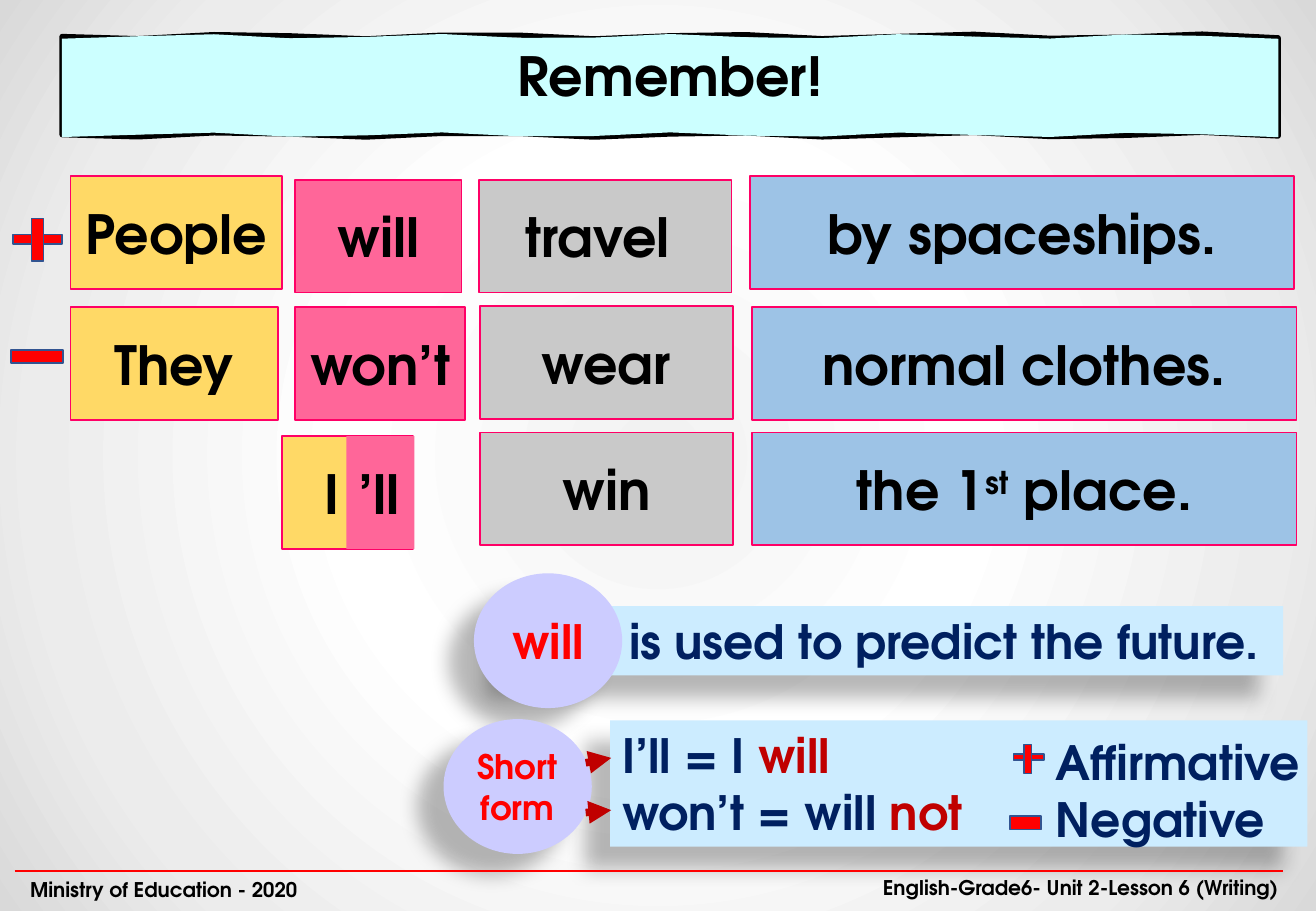
"""Build the "Remember!" slide on will, won't and their short forms."""
from dataclasses import dataclass
from math import sin
from pptx import Presentation
from pptx.dml.color import RGBColor
from pptx.enum.shapes import MSO_CONNECTOR, MSO_SHAPE
from pptx.enum.text import MSO_ANCHOR, MSO_AUTO_SIZE, PP_ALIGN
from pptx.oxml import parse_xml
from pptx.oxml.ns import nsdecls, qn
from pptx.util import Inches, Pt


@dataclass(frozen=True)
class Theme:
    font: str = "TeX Gyre Adventor"
    black: str = "000000"
    navy: str = "002060"
    red: str = "FF0000"
    dark: str = "C00000"
    edge: str = "FF0066"
    trim: str = "325491"
    gold: str = "FFD966"
    pink: str = "FF6699"
    gray: str = "C9C9C9"
    blue: str = "9DC3E6"
    sky: str = "CCECFF"
    lilac: str = "CCCCFF"
    aqua: str = "CCFFFF"
    big: int = 32
    mid: int = 28
    small: int = 20
    foot: int = 12


def paint(shape, fill, line=None, width=1, shade=False):
    """Set the fill, line and shadow of a shape."""
    shape.shadow.inherit = False
    shape.fill.solid()
    shape.fill.fore_color.rgb = RGBColor.from_string(fill)
    if line:
        shape.line.color.rgb = RGBColor.from_string(line)
        shape.line.width = Pt(width)
    else:
        shape.line.fill.background()
    if shade:
        shape.element.spPr.find(qn("a:effectLst")).append(parse_xml(
            f'<a:outerShdw {nsdecls("a")} blurRad="150000" dist="250000" dir="8460000" '
            'algn="tl" rotWithShape="0"><a:srgbClr val="000000"><a:alpha val="28000"/>'
            '</a:srgbClr></a:outerShdw>'))


def style(shape, size, tint, align=PP_ALIGN.CENTER, anchor=MSO_ANCHOR.MIDDLE):
    """Format all the text in a shape."""
    frame = shape.text_frame
    frame.auto_size = MSO_AUTO_SIZE.NONE
    frame.word_wrap = True
    frame.vertical_anchor = anchor
    for para in frame.paragraphs:
        para.alignment = align
        para.space_before = Pt(0)
        for run in para.runs:
            run.font.name = theme.font
            run.font.size = Pt(size)
            run.font.bold = True
            run.font.color.rgb = RGBColor.from_string(tint)


theme = Theme()
deck = Presentation()
deck.slide_width, deck.slide_height = Inches(10.83), Inches(7.5)
slide = deck.slides.add_slide(deck.slide_layouts[3])
shapes = slide.shapes
title, forms, signs = slide.placeholders

stops = "".join(
    f'<a:gs pos="{pos}000"><a:srgbClr val="{tint}"/></a:gs>'
    for pos, tint in [(0, "F2F2F2"), (39, "FFFFFF"), (78, "ECECEC"), (100, "D9D9D9")])
slide.element.find(qn("p:cSld")).insert(0, parse_xml(
    f'<p:bg {nsdecls("p", "a")}><p:bgPr><a:gradFill rotWithShape="1"><a:gsLst>{stops}</a:gsLst>'
    '<a:path path="circle"><a:fillToRect l="50000" t="50000" r="50000" b="50000"/></a:path>'
    '</a:gradFill><a:effectLst/></p:bgPr></p:bg>'))

left, top, wide, high = 0.51, 0.3, 10.01, 0.81
steps = 16
layers = []
for phase in (0, 1.2):
    wave = [(left + wide * i / steps, 0.02 * sin(i * 2 + phase)) for i in range(steps + 1)]
    rim = [(x, top + y) for x, y in wave] + [(x, top + high + y) for x, y in reversed(wave)]
    pen = shapes.build_freeform(Inches(rim[0][0]), Inches(rim[0][1]), scale=1.0)
    pen.add_line_segments([(Inches(x), Inches(y)) for x, y in rim[1:]])
    layers.append(pen.convert_to_shape())
banner, cover = layers
outline, inside = (next(layer.element.iter(qn("a:path"))) for layer in layers)
outline.set("fill", "none")
inside.set("stroke", "0")
outline.addnext(inside)
cover.element.getparent().remove(cover.element)
paint(banner, theme.aqua, theme.black, 3)
title.element.addprevious(banner.element)

title.left, title.top, title.width, title.height = map(Inches, (left, top, wide, high))
title.text_frame.text = "Remember!"
style(title, theme.big, theme.black, anchor=MSO_ANCHOR.TOP)

tiles = [
    ("People ", 0.58, 1.45, 1.74, theme.gold),
    ("will", 2.43, 1.48, 1.37, theme.pink),
    ("travel ", 3.94, 1.48, 2.08, theme.gray),
    ("by spaceships.", 6.17, 1.45, 4.48, theme.blue),
    ("They", 0.58, 2.53, 1.71, theme.gold),
    ("won’t", 2.43, 2.53, 1.4, theme.pink),
    ("wear", 3.95, 2.52, 2.08, theme.gray),
    ("normal clothes.", 6.19, 2.53, 4.48, theme.blue),
    ("I", 2.32, 3.59, 1.08, theme.gold),
    ("’ll", 2.85, 3.59, 0.56, theme.pink),
    ("win", 3.95, 3.56, 2.08, theme.gray),
    ("the 1", 6.19, 3.56, 4.48, theme.blue),
]
for text, x, y, w, fill in tiles:
    tile = shapes.add_shape(MSO_SHAPE.RECTANGLE, *map(Inches, (x, y, w, 0.93)))
    paint(tile, fill, None if text == "’ll" else theme.edge)
    tile.text_frame.text = text
    if text == "I":
        tile.text_frame.margin_left = Inches(0.35)
    if text == "the 1":
        for part in ("st", " place."):
            tile.text_frame.paragraphs[0].add_run().text = part
    short = text in ("I", "’ll")
    style(tile, theme.big, theme.black, PP_ALIGN.LEFT if short else PP_ALIGN.CENTER)
list(tile.element.iter(qn("a:rPr")))[1].set("baseline", "30000")

bar = shapes.add_shape(MSO_SHAPE.RECTANGLE, *map(Inches, (4.21, 4.99, 6.35, 0.57)))
paint(bar, theme.sky, shade=True)
bar.text_frame.text = "is used to predict the future."
bar.text_frame.margin_left = Inches(0.97)
bar.text_frame.margin_right = 0
style(bar, theme.mid, theme.navy, PP_ALIGN.LEFT, MSO_ANCHOR.TOP)

forms.left, forms.top, forms.width, forms.height = map(Inches, (5.02, 5.93, 5.74, 1.04))
forms.text_frame.text = "I’ll = I \nwon’t = will "
paint(forms, theme.sky, shade=True)
signs.left, signs.top, signs.width, signs.height = map(Inches, (8.59, 5.99, 2.25, 1.04))
signs.text_frame.text = "Affirmative\nNegative"
for para, word in zip(forms.text_frame.paragraphs, ("will", "not")):
    para.add_run().text = word
for block in (forms, signs):
    style(block, theme.mid, theme.navy, PP_ALIGN.LEFT, MSO_ANCHOR.TOP)
    for prop in block.element.iter(qn("a:pPr")):
        prop.set("marL", "0")
        prop.set("indent", "0")
        prop.append(parse_xml(f'<a:buNone {nsdecls("a")}/>'))
for para in forms.text_frame.paragraphs:
    para.runs[1].font.color.rgb = RGBColor.from_string(theme.dark)

for text, x, y, size in [("will", 3.9, 4.72, theme.mid), ("Short form", 3.65, 5.92, theme.small)]:
    disc = shapes.add_shape(MSO_SHAPE.OVAL, *map(Inches, (x, y, 1.22, 1.11)))
    paint(disc, theme.lilac, shade=True)
    disc.text_frame.text = text
    disc.text_frame.margin_left = disc.text_frame.margin_right = 0
    style(disc, size, theme.red)

lines = [
    (0.12, 7.17, 10.56, 7.17, theme.red, 1.5),
    (4.82, 6.28, 5.03, 6.24, theme.dark, 4.5),
    (4.82, 6.69, 5.03, 6.67, theme.dark, 4.5),
]
for *ends, tint, width in lines:
    link = shapes.add_connector(MSO_CONNECTOR.STRAIGHT, *map(Inches, ends))
    link.line.color.rgb = RGBColor.from_string(tint)
    link.line.width = Pt(width)
    if tint == theme.dark:
        link.element.spPr.find(qn("a:ln")).append(
            parse_xml(f'<a:tailEnd {nsdecls("a")} type="triangle"/>'))
    link.element.spPr.append(parse_xml(f'<a:effectLst {nsdecls("a")}/>'))

strokes = [
    (0.11, 1.93, 0.4, 0.08), (0.26, 1.8, 0.1, 0.35), (0.09, 2.88, 0.43, 0.11),
    (8.34, 6.21, 0.25, 0.05), (8.43, 6.13, 0.06, 0.24), (8.31, 6.72, 0.26, 0.11),
]
for place in strokes:
    stroke = shapes.add_shape(MSO_SHAPE.RECTANGLE, *map(Inches, place))
    paint(stroke, theme.red, theme.trim)

notes = [
    ("Ministry of Education - 2020", 0.15, 7.17, 2.6, PP_ALIGN.LEFT),
    ("English-Grade6- Unit 2-Lesson 6 (Writing)", 7.1, 7.16, 3.59, PP_ALIGN.CENTER),
]
for text, x, y, w, align in notes:
    note = shapes.add_textbox(*map(Inches, (x, y, w, 0.3)))
    note.text_frame.text = text
    style(note, theme.foot, theme.black, align)

deck.save("out.pptx")
